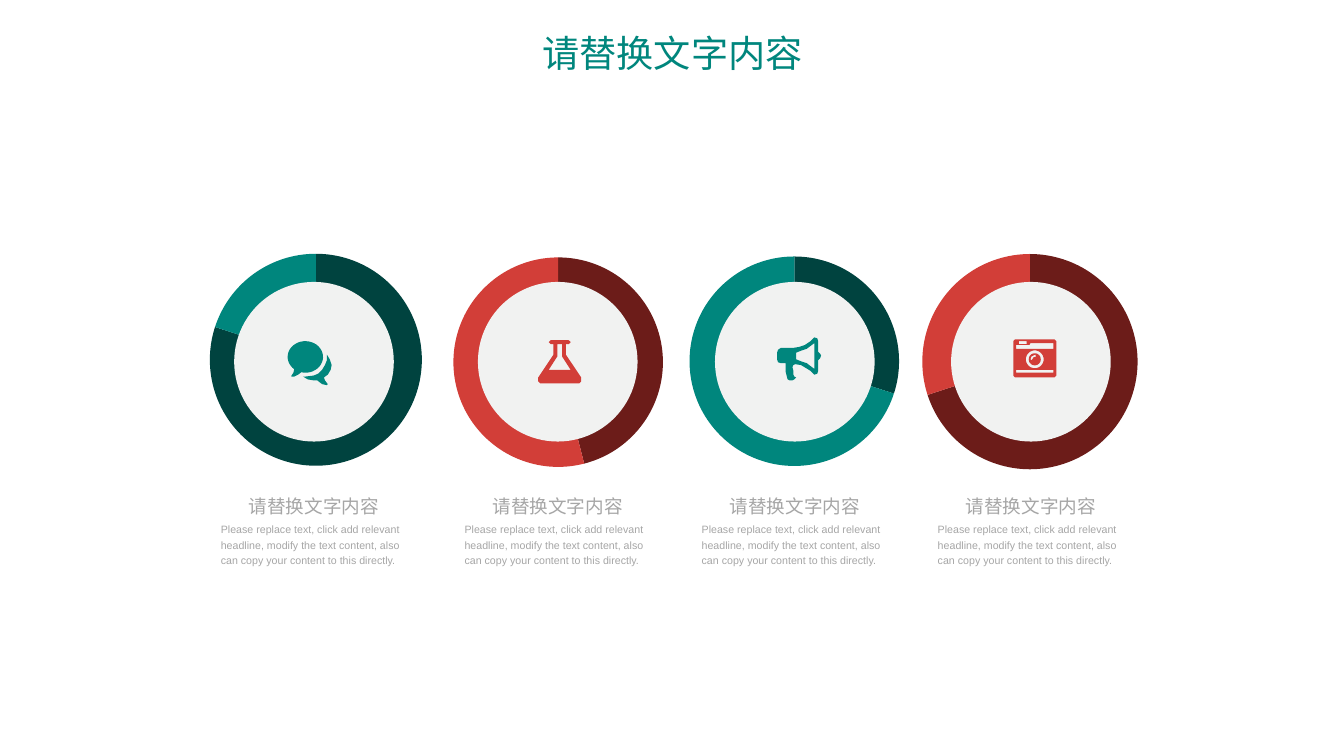
from dataclasses import dataclass
from math import cos, radians, sin

from lxml.etree import SubElement
from pptx import Presentation
from pptx.chart.data import CategoryChartData as Data
from pptx.dml.color import RGBColor as Rgb
from pptx.enum.chart import XL_CHART_TYPE as Kind
from pptx.enum.shapes import MSO_SHAPE as Form
from pptx.enum.text import MSO_ANCHOR as Anchor
from pptx.enum.text import MSO_AUTO_SIZE as Auto
from pptx.enum.text import PP_ALIGN as Align
from pptx.oxml import parse_xml
from pptx.oxml.ns import nsdecls, qn
from pptx.util import Inches, Pt


@dataclass(frozen=True)
class Theme:
    teal: tuple = ("00433F", "00867D")
    red: tuple = ("6C1C19", "D23E38")
    disc: str = "F1F2F1"
    gray: str = "A6A6A6"
    black: str = "000000"
    latin: str = "Arial"
    asian: str = "Noto Sans CJK SC"
    title: int = 28
    head: int = 14
    body: int = 8
    chart: int = 30


@dataclass(frozen=True)
class Item:
    left: float
    pie: tuple
    share: int
    tones: tuple
    spot: tuple
    icon: list


THEME = Theme()
HEAD = "请替换文字内容"
BODY = ("Please replace text, click add relevant headline, modify the text "
        "content, also can copy your content to this directly.")
TOP, WIDTH, DISC = 2.46, 1.95, 1.67


def arc(x, y, wide, high, start=0, end=350, step=10):
    turns = [radians(a) for a in range(start, end + 1, step)]
    return [(x + wide * cos(t), y + high * sin(t)) for t in turns]


def rect(left, top, right, base):
    return [(left, top), (right, top), (right, base), (left, base)]


CHAT = [
    arc(18.5, 16.5, 18.5, 16.5, 128, 461, 9)
    + [(15, 32), (11, 35), (7, 37), (4, 37), (4, 36), (6, 33), (7, 29)],
    [(46, 25), (45, 30), (42, 35), (38, 38), (39, 41), (42, 45), (41, 46),
     (36, 45), (31, 41), (27, 41), (21, 40), (16, 37), (19, 37), (27, 36),
     (32, 34), (36, 30), (39, 25), (41, 20), (41, 14), (44, 19)],
]
FLASK = [
    [(45, 39), (45, 43), (43, 45), (2, 45), (0, 43), (0, 39), (16, 15),
     (16, 4), (13, 4), (11, 2), (13, 0), (32, 0), (34, 2), (32, 4), (29, 4),
     (29, 15)],
    [(11, 31), (34, 31), (25, 17), (25, 4), (20, 4), (20, 17)],
]
HORN = [
    [(46, 19), (45, 22), (43, 24), (43, 35), (42, 38), (39, 39), (35, 35),
     (30, 32), (25, 29), (19, 28), (17, 29), (16, 31), (17, 35), (17, 39),
     (18, 41), (20, 42), (18, 44), (16, 45), (13, 45), (11, 44), (10, 40),
     (9, 36), (9, 27), (4, 27), (1, 26), (0, 23), (0, 16), (1, 13), (4, 11),
     (17, 11), (23, 10), (29, 8), (35, 4), (39, 0), (42, 1), (43, 4),
     (43, 15), (45, 17)],
    [(39, 6), (35, 9), (31, 12), (25, 14), (20, 16), (20, 23), (25, 25),
     (31, 27), (35, 30), (39, 33)],
]
CAMERA = [
    [(2, 0), (43, 0), (45, 2), (45, 38), (43, 40), (2, 40), (0, 38), (0, 2)],
    [(42, 4), (18, 4), (17, 6), (3, 6), (3, 10), (42, 10)],
    rect(3, 32, 42, 35),
    rect(6, 2, 14, 5),
    arc(22.5, 21, 9.3, 9.3),
    arc(22.5, 21, 6.3, 6.3),
    [(20, 21), (21, 19), (24, 18), (23, 16), (19, 18), (18, 21), (19, 22)],
]

ITEMS = [
    Item(2.31, (2, 2.46, 2.61), 80, THEME.teal, (0.7, 1.11), CHAT),
    Item(4.86, (4.55, 2.5, 2.58), 46, THEME.red, (0.77, 1.1), FLASK),
    Item(7.34, (7.02, 2.49, 2.58), 30, THEME.teal, (0.79, 1.07), HORN),
    Item(9.81, (9.45, 2.46, 2.65), 70, THEME.red, (0.79, 1.09), CAMERA),
]


def paint(shape, tone):
    shape.fill.solid()
    shape.fill.fore_color.rgb = Rgb.from_string(tone)
    shape.line.fill.background()
    shape.shadow.inherit = False


def write(slide, box, text, size, tone, font, align, inset=0):
    frame = slide.shapes.add_textbox(*map(Inches, box)).text_frame
    frame.word_wrap = True
    frame.auto_size = Auto.SHAPE_TO_FIT_TEXT
    if inset == 0:
        frame.margin_left = frame.margin_right = 0
        frame.margin_top = frame.margin_bottom = 0
    frame.text = text
    para = frame.paragraphs[0]
    para.alignment = align
    run = para.runs[0]
    run.font.size = Pt(size)
    run.font.name = font
    run.font.color.rgb = Rgb.from_string(tone)
    SubElement(run.font._element, qn("a:ea")).set("typeface", THEME.asian)
    return frame


def draw_pie(slide, box, share, tones):
    left, top, size = map(Inches, box)
    data = Data()
    data.categories = ["1", "2"]
    data.add_series("Series 1", (share, 100 - share))
    chart = slide.shapes.add_chart(Kind.PIE, left, top, size, size, data).chart
    chart.has_legend = False
    chart.has_title = False
    chart.font.size = Pt(THEME.chart)
    chart.font.name = THEME.latin
    chart.font.color.rgb = Rgb.from_string(THEME.black)
    plot = chart.plots[0]
    plot.vary_by_categories = False
    for num, tone in enumerate(tones):
        part = plot.series[0].points[num].format
        part.fill.solid()
        part.fill.fore_color.rgb = Rgb.from_string(tone)
        part.line.fill.background()
    area = chart._chartSpace.chart.plotArea
    for old in area.findall(qn("c:layout")):
        area.remove(old)
    rules = [("layoutTarget", "inner"), ("xMode", "edge"), ("yMode", "edge"),
             ("x", 0.075), ("y", 0), ("w", 0.85), ("h", 1)]
    tags = "".join(f'<c:{tag} val="{val}"/>' for tag, val in rules)
    area.insert(0, parse_xml(
        f'<c:layout {nsdecls("c")}><c:manualLayout>{tags}'
        '</c:manualLayout></c:layout>'))


def draw_icon(slide, left, top, icon, tone):
    loops = [[(x * 10, y * 10) for x, y in loop] for loop in icon]
    pen = slide.shapes.build_freeform(*loops[0][0], scale=Inches(0.001))
    pen.add_line_segments(loops[0][1:])
    for loop in loops[1:]:
        pen.move_to(*loop[0])
        pen.add_line_segments(loop[1:])
    paint(pen.convert_to_shape(Inches(left), Inches(top)), tone)


def draw_item(slide, item, top, width):
    left = item.left
    draw_pie(slide, item.pie, item.share, item.tones)
    disc = slide.shapes.add_shape(
        Form.OVAL, Inches(left + (width - DISC) / 2), Inches(top + 0.49),
        Inches(DISC), Inches(DISC))
    paint(disc, THEME.disc)
    right, down = item.spot
    draw_icon(slide, left + right, top + down, item.icon, item.tones[1])
    head = write(slide, (left, top + 2.72, width, 0.24), HEAD, THEME.head,
                 THEME.gray, THEME.latin, Align.CENTER)
    head.vertical_anchor = Anchor.MIDDLE
    body = write(slide, (left, top + 2.99, width, 0.47), BODY, THEME.body,
                 THEME.gray, THEME.latin, Align.LEFT)
    body.paragraphs[0].line_spacing = 1.2
    body.paragraphs[0].space_before = Pt(8)


def draw_title(slide, box):
    frame = write(slide, box, HEAD, THEME.title, THEME.teal[1], THEME.asian,
                  Align.CENTER, 0.1)
    frame.vertical_anchor = Anchor.MIDDLE
    frame.paragraphs[0].line_spacing = 1.2


def main():
    deck = Presentation()
    deck.slide_width, deck.slide_height = Inches(14.06), Inches(7.91)
    slide = deck.slides.add_slide(deck.slide_layouts[6])
    for item in ITEMS:
        draw_item(slide, item, TOP, WIDTH)
    draw_title(slide, (5.31, 0.17, 3.45, 0.67))
    deck.save("out.pptx")


if __name__ == "__main__":
    main()
